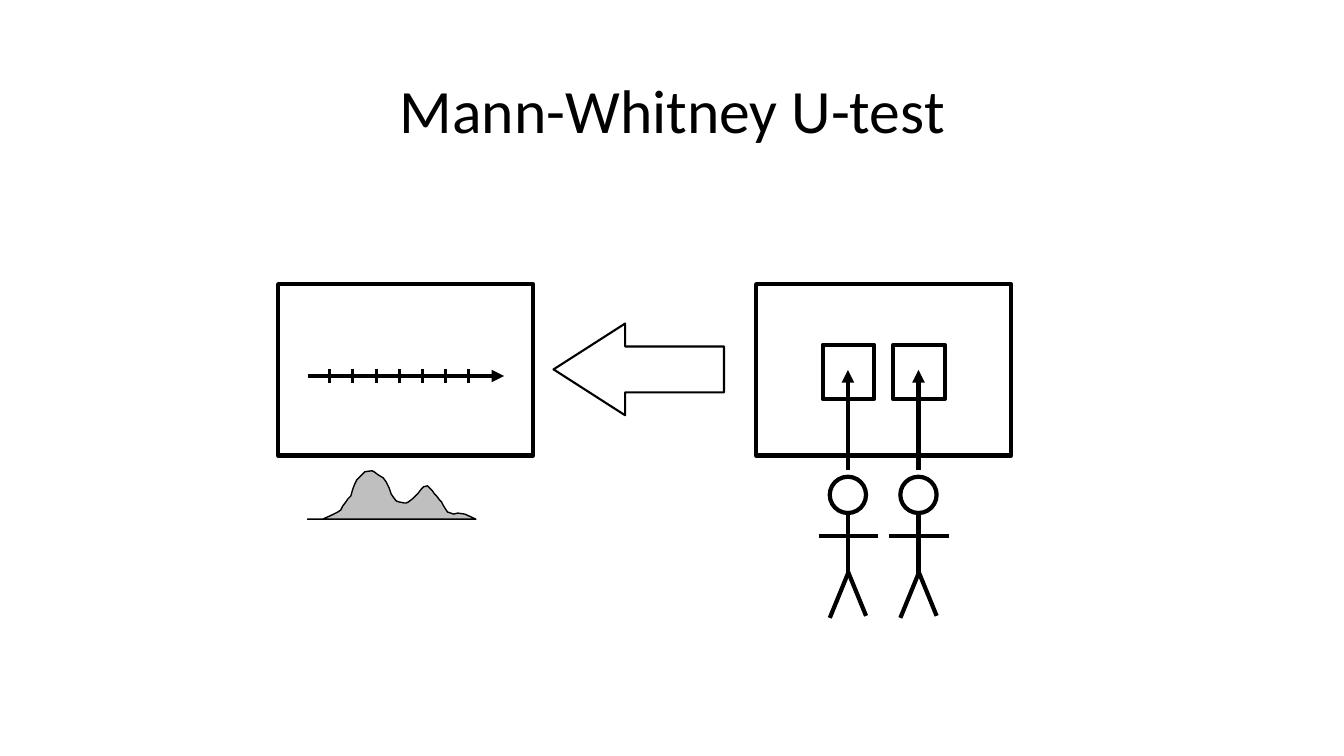
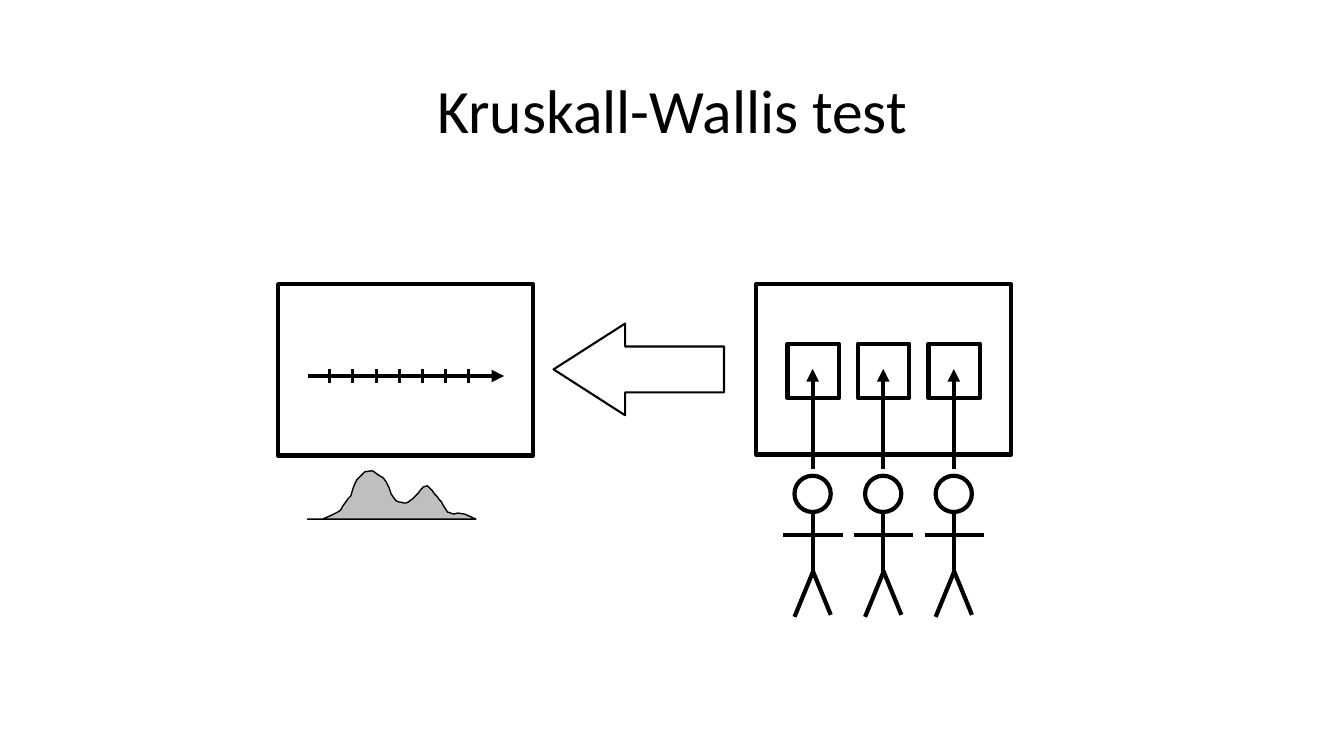
from lxml.etree import SubElement
from pptx import Presentation
from pptx.dml.color import RGBColor
from pptx.enum.shapes import MSO_CONNECTOR as Connector, MSO_SHAPE as Preset
from pptx.enum.text import MSO_ANCHOR as Anchor, PP_ALIGN as Align
from pptx.oxml.ns import qn
from pptx.util import Pt

PX = 9144
BLACK, WHITE, GREY = "000000", "FFFFFF", "BFBFBF"
SLIDE_SIZE = (1333, 750)
TITLE_BOX = (92, 40, 1150, 145)
SCALE_BOX = (276, 282, 253, 170)
ARROW_BOX = (549, 321, 169, 91)
CURVE_BOX = (305, 467, 167, 48)

TITLE_FRAME = {"vertical_anchor": Anchor.MIDDLE, "word_wrap": True}
TITLE_PARAGRAPH = {"alignment": Align.CENTER, "line_spacing": 0.9}
TITLE_FONT = {"name": "Calibri", "size": Pt(44)}

TESTS = [
    {"title": "Mann-Whitney U-test", "samples": 2, "sample_box": (750, 282, 253, 170)},
    {"title": "Kruskall-Wallis test", "samples": 3, "sample_box": (750, 282, 253, 169)},
]

CURVE = [
    (167, 48), (156, 43), (149, 42), (145, 43), (142, 42), (139, 41), (137, 38),
    (135, 35), (133, 31), (131, 29), (128, 25), (126, 23), (124, 20), (121, 17),
    (119, 15), (115, 16), (113, 18), (110, 22), (108, 24), (104, 28), (100, 31),
    (98, 32), (96, 32), (91, 31), (88, 30), (85, 26), (83, 23), (81, 17),
    (78, 11), (75, 7), (70, 4), (66, 1), (64, 0), (57, 1), (54, 4), (49, 9),
    (47, 13), (45, 18), (43, 25), (40, 28), (38, 31), (35, 35), (33, 39),
    (30, 41), (26, 43), (22, 45), (15, 48),
]


def emu(lengths):
    """Turn px lengths into EMU."""
    return [round(length * PX) for length in lengths]


def color(hex_code):
    """Return the colour for a hex string."""
    return RGBColor.from_string(hex_code)


def apply(target, values):
    """Set each format value on the target."""
    for key, value in values.items():
        setattr(target, key, value)


def style(shape, fill, weight):
    """Give a shape a plain fill and a black outline."""
    shape.shadow.inherit = False
    shape.fill.solid()
    shape.fill.fore_color.rgb = color(fill)
    shape.line.color.rgb = color(BLACK)
    shape.line.width = Pt(weight)


def add_outline(shapes, preset, box, weight=3):
    """Add a white preset shape with a black outline."""
    outline = shapes.add_shape(preset, *emu(box))
    style(outline, WHITE, weight)
    return outline


def add_stroke(shapes, start, end, weight=3, arrow=False):
    """Add a straight black line, with an arrowhead at its end if wanted."""
    stroke = shapes.add_connector(Connector.STRAIGHT, *emu(start + end))
    stroke.line.color.rgb = color(BLACK)
    stroke.line.width = Pt(weight)
    if arrow:
        SubElement(stroke.line._get_or_add_ln(), qn("a:tailEnd"), type="triangle")
    SubElement(stroke._element.spPr, qn("a:effectLst"))


def add_title(slide, text, box):
    """Place and format the slide title."""
    title = slide.shapes.title
    apply(title, dict(zip(("left", "top", "width", "height"), emu(box))))
    title.text_frame.text = text
    paragraph = title.text_frame.paragraphs[0]
    apply(title.text_frame, TITLE_FRAME)
    apply(paragraph, TITLE_PARAGRAPH)
    font = paragraph.runs[0].font
    apply(font, TITLE_FONT)
    font.color.rgb = color(BLACK)


def add_scale(slide, box):
    """Draw the framed measurement axis with its ticks."""
    shapes = slide.shapes.add_group_shape().shapes
    left, top = box[:2]
    axis = top + 91
    add_outline(shapes, Preset.RECTANGLE, box)
    add_stroke(shapes, (left + 29, axis), (left + 224, axis), arrow=True)
    for tick in range(7):
        x = left + 51 + 23 * tick
        add_stroke(shapes, (x, axis - 7), (x, axis + 7), 2.25)


def add_distribution(slide, box):
    """Draw the two-peaked distribution curve."""
    left, top, _, baseline = box
    builder = slide.shapes.build_freeform(0, baseline, scale=PX)
    builder.add_line_segments(CURVE, close=True)
    style(builder.convert_to_shape(*emu((left, top))), GREY, 1)


def add_block_arrow(slide, box):
    """Draw the block arrow from the samples to the scale."""
    arrow = add_outline(slide.shapes, Preset.LEFT_ARROW, box, 1.5)
    arrow.adjustments[0], arrow.adjustments[1] = 0.5, 0.78


def add_person(shapes, x, floor):
    """Draw a stick figure below the floor line, pointing at its square."""
    hip = floor + 117
    add_outline(shapes, Preset.RECTANGLE, (x - 25, floor - 110, 51, 54))
    add_outline(shapes, Preset.OVAL, (x - 18, floor + 21, 36, 36))
    add_stroke(shapes, (x, floor + 58), (x, hip))
    add_stroke(shapes, (x, hip), (x - 18, hip + 44))
    add_stroke(shapes, (x, hip - 2), (x + 18, hip + 42))
    add_stroke(shapes, (x + 30, floor + 80), (x - 29, floor + 80))
    add_stroke(shapes, (x, floor + 14), (x, floor - 85), arrow=True)


def add_samples(slide, box, count, pitch=70):
    """Draw the sample frame with evenly spaced people centred in it."""
    shapes = slide.shapes.add_group_shape().shapes
    left, top, width, height = box
    first = left + (width - pitch * (count - 1)) // 2
    add_outline(shapes, Preset.RECTANGLE, box)
    for person in range(count):
        add_person(shapes, first + pitch * person, top + height)


def add_test_slide(deck, title, samples, sample_box):
    """Build the slide for one statistical test."""
    slide = deck.slides.add_slide(deck.slide_layouts[5])
    add_title(slide, title, TITLE_BOX)
    add_scale(slide, SCALE_BOX)
    add_distribution(slide, CURVE_BOX)
    add_block_arrow(slide, ARROW_BOX)
    add_samples(slide, sample_box, samples)


def main():
    """Build and save the deck."""
    deck = Presentation()
    deck.slide_width, deck.slide_height = emu(SLIDE_SIZE)
    for test in TESTS:
        add_test_slide(deck, **test)
    deck.save("out.pptx")


if __name__ == "__main__":
    main()
